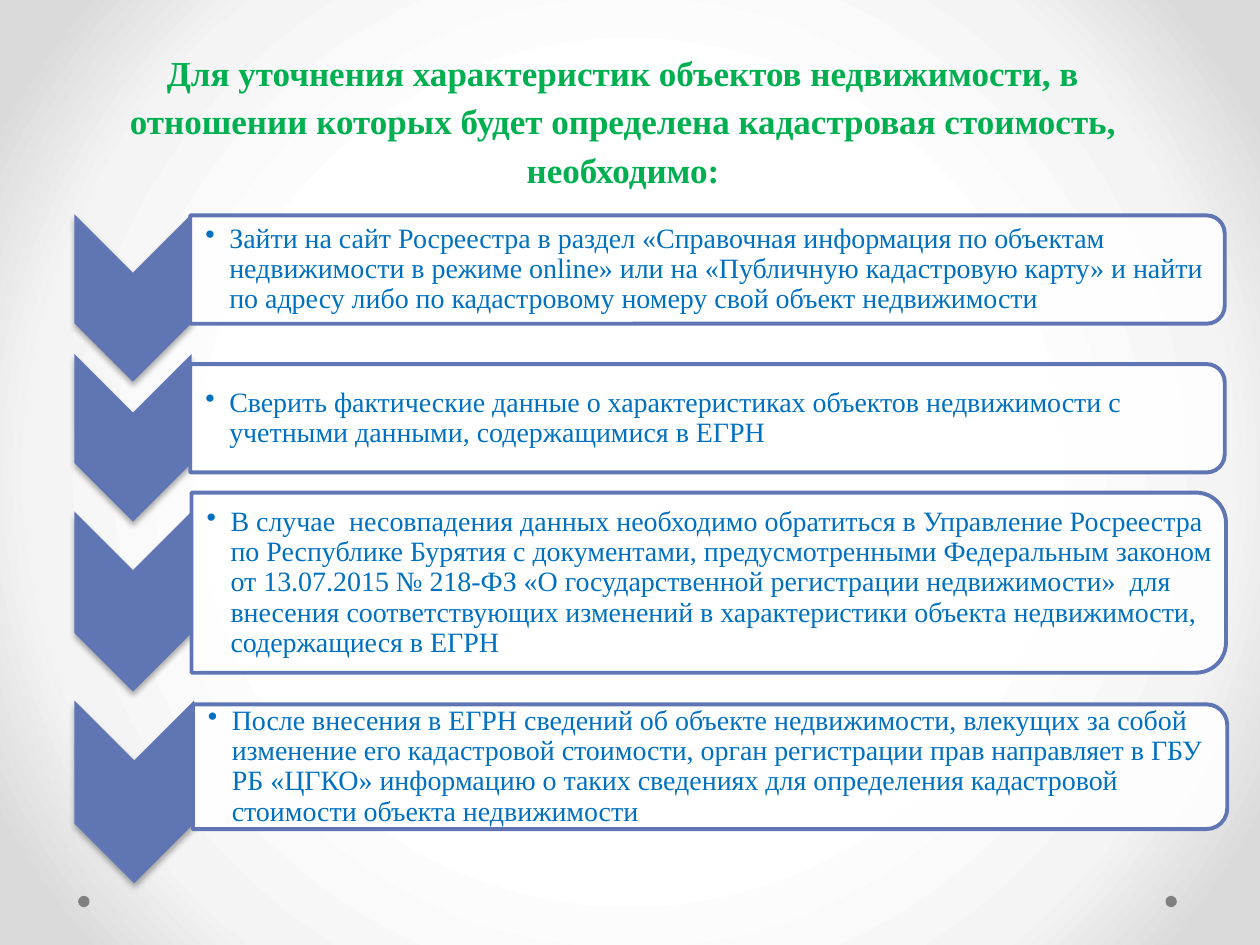
from dataclasses import dataclass

from pptx import Presentation
from pptx.dml.color import RGBColor
from pptx.enum.shapes import MSO_SHAPE
from pptx.enum.text import MSO_ANCHOR, MSO_AUTO_SIZE, PP_ALIGN
from pptx.oxml import parse_xml
from pptx.oxml.ns import nsdecls, qn
from pptx.util import Inches, Pt


@dataclass(frozen=True)
class Theme:
    font: str = "Times New Roman"
    head: str = "00B050"
    body: str = "0070C0"
    main: str = "6076B4"
    pane: str = "FFFFFF"
    dot: str = "808080"
    glow: tuple = ((50, "FFFFFF"), (76, "F4F4F4"), (92, "DADADA"))
    head_size: int = 20
    body_size: int = 16
    edge: float = 2.25


THEME = Theme()
TITLE = ("Для уточнения характеристик объектов недвижимости, в отношении которых "
         "будет определена кадастровая стоимость, необходимо:")
# Chevron box, pane box (left, top, width, height), text
STEPS = [
    ((0.59, 1.7, 0.93, 1.33), (1.51, 1.71, 8.21, 0.86),
     "Зайти на сайт Росреестра в раздел «Справочная информация по объектам "
     "недвижимости в режиме online» или на «Публичную кадастровую карту» и найти "
     "по адресу либо по кадастровому номеру свой объект недвижимости"),
    ((0.59, 2.81, 0.93, 1.33), (1.51, 2.89, 8.21, 0.86),
     "Сверить фактические данные о характеристиках объектов недвижимости с "
     "учетными данными, содержащимися в ЕГРН"),
    ((0.59, 4.06, 0.93, 1.43), (1.52, 3.91, 8.21, 1.43),
     "В случае  несовпадения данных необходимо обратиться в Управление Росреестра "
     "по Республике Бурятия с документами, предусмотренными Федеральным законом "
     "от 13.07.2015 № 218-ФЗ «О государственной регистрации недвижимости»  для "
     "внесения соответствующих изменений в характеристики объекта недвижимости, "
     "содержащиеся в ЕГРН"),
    ((0.59, 5.56, 0.95, 1.45), (1.53, 5.59, 8.21, 0.99),
     "После внесения в ЕГРН сведений об объекте недвижимости, влекущих за собой "
     "изменение его кадастровой стоимости, орган регистрации прав направляет в ГБУ "
     "РБ «ЦГКО» информацию о таких сведениях для определения кадастровой "
     "стоимости объекта недвижимости"),
]


def color(code):
    return RGBColor.from_string(code)


def add_glow(slide):
    """Fill the background with a round gradient."""
    slide.background.fill.gradient()
    old = slide.element.find(".//" + qn("a:gradFill"))
    stops = "".join(f'<a:gs pos="{pos * 1000}"><a:srgbClr val="{code}"/></a:gs>'
                    for pos, code in THEME.glow)
    new = parse_xml(
        f'<a:gradFill {nsdecls("a")} rotWithShape="1"><a:gsLst>{stops}</a:gsLst>'
        '<a:path path="circle"><a:fillToRect l="50000" t="50000" r="50000" b="50000"/>'
        '</a:path></a:gradFill>')
    old.getparent().replace(old, new)


def add_form(slide, kind, box, fill, turn=0):
    """Add a plain shape whose box holds as seen after a turn of 0 or 90 degrees."""
    left, top, width, height = box
    if turn:
        left, top = left + (width - height) / 2, top + (height - width) / 2
        width, height = height, width
    form = slide.shapes.add_shape(kind, *map(Inches, (left, top, width, height)))
    form.rotation = turn
    form.shadow.inherit = False
    form.fill.solid()
    form.fill.fore_color.rgb = color(fill)
    form.line.fill.background()
    return form


def add_title(slide, box):
    title = slide.shapes.title
    title.left, title.top, title.width, title.height = map(Inches, box)
    frame = title.text_frame
    frame.text = TITLE
    frame.auto_size = MSO_AUTO_SIZE.NONE
    frame.vertical_anchor = MSO_ANCHOR.MIDDLE
    para = frame.paragraphs[0]
    para.alignment = PP_ALIGN.CENTER
    para.line_spacing = 1.15
    para.space_after = Pt(10)
    style(para, THEME.head_size, THEME.head, True)


def style(para, size, code, bold=False):
    font = para.font
    font.name, font.size, font.bold = THEME.font, Pt(size), bold
    font.color.rgb = color(code)


def add_arrow(slide, box):
    arrow = add_form(slide, MSO_SHAPE.CHEVRON, box, THEME.main, 90)
    arrow.element.spPr.find(qn("a:effectLst")).append(parse_xml(
        f'<a:outerShdw {nsdecls("a")} blurRad="{Pt(3.5)}" dist="{Pt(2.2)}" '
        'dir="5400000" rotWithShape="0"><a:srgbClr val="000000">'
        '<a:alpha val="32000"/></a:srgbClr></a:outerShdw>'))


def add_pane(slide, box, text):
    pane = add_form(slide, MSO_SHAPE.ROUND_2_SAME_RECTANGLE, box, THEME.pane, 90)
    pane.line.color.rgb = color(THEME.main)
    pane.line.width = Pt(THEME.edge)
    tint = pane.element.spPr.find(qn("a:solidFill"))[0]
    tint.append(parse_xml(f'<a:alpha {nsdecls("a")} val="90000"/>'))

    left, top, width, height = box
    pad = height * 0.05
    area = (left, top + pad, width - pad, height - 2 * pad)
    frame = slide.shapes.add_textbox(*map(Inches, area)).text_frame
    frame.word_wrap = True
    frame.vertical_anchor = MSO_ANCHOR.MIDDLE
    frame.margin_left = Inches(0.12)
    frame.margin_top = frame.margin_right = frame.margin_bottom = Inches(0.01)
    frame.text = text
    para = frame.paragraphs[0]
    para.line_spacing = 0.9
    para.space_after = Pt(0.15 * THEME.body_size)
    style(para, THEME.body_size, THEME.body)
    props = para._p.get_or_add_pPr()
    props.set("marL", str(Inches(0.19)))
    props.set("indent", str(-Inches(0.19)))
    mark = parse_xml(f'<a:buChar {nsdecls("a")} char="•"/>')
    props.find(qn("a:defRPr")).addprevious(mark)


def main():
    deck = Presentation()
    deck.slide_width, deck.slide_height = Inches(10), Inches(7.5)
    slide = deck.slides.add_slide(deck.slide_layouts[5])
    add_glow(slide)
    for left in (9.25, 0.62):
        add_form(slide, MSO_SHAPE.OVAL, (left, 7.11, 0.09, 0.09), THEME.dot)
    add_title(slide, (0.51, 0.44, 8.87, 0.99))
    for arrow, pane, text in STEPS:
        add_arrow(slide, arrow)
        add_pane(slide, pane, text)
    deck.save("out.pptx")


if __name__ == "__main__":
    main()
